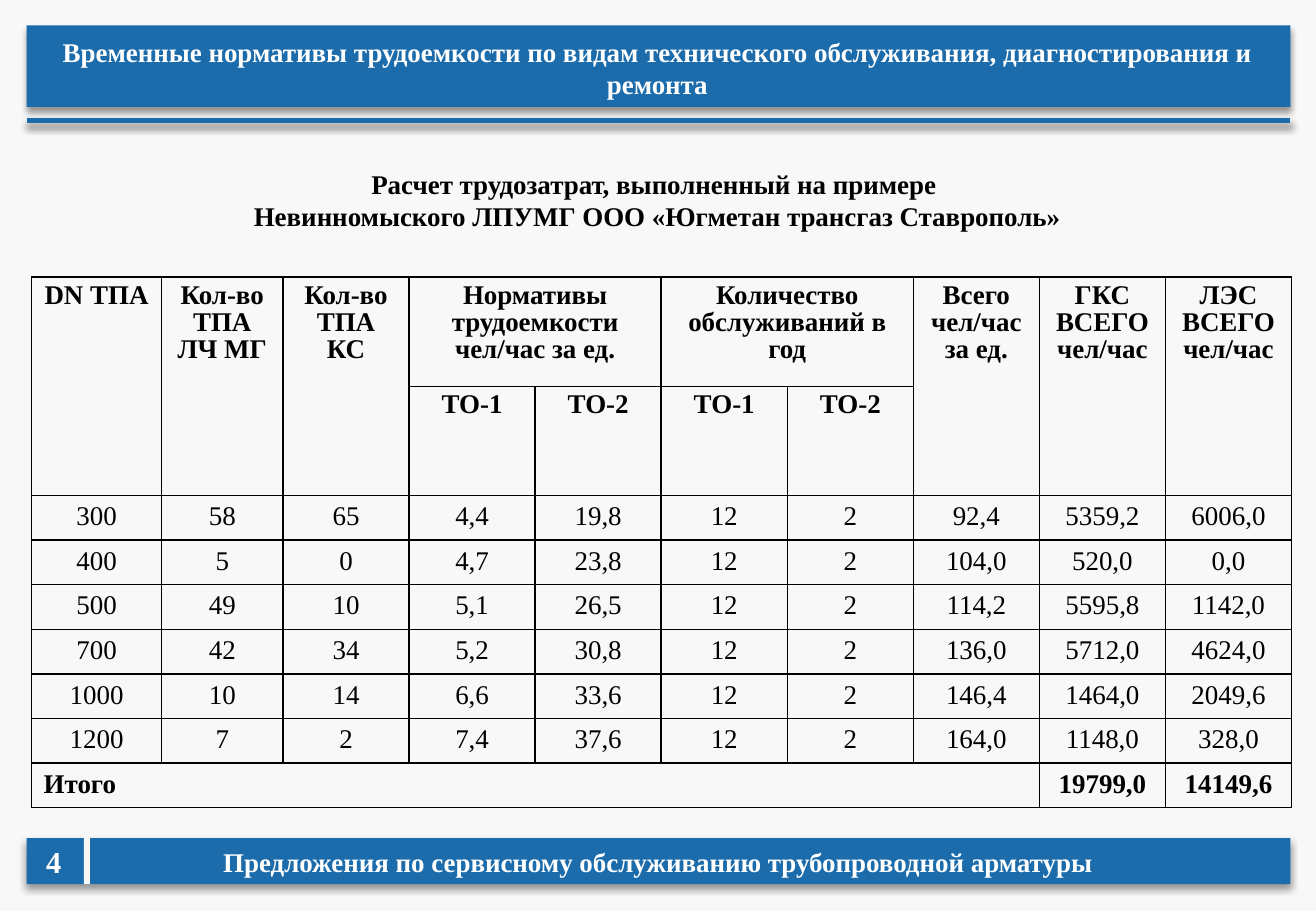
from dataclasses import dataclass
from typing import Any, Optional

from lxml import etree
from pptx import Presentation
from pptx.dml.color import RGBColor
from pptx.enum.shapes import MSO_CONNECTOR, MSO_SHAPE
from pptx.enum.text import MSO_ANCHOR, MSO_AUTO_SIZE, PP_ALIGN
from pptx.oxml import parse_xml
from pptx.oxml.ns import nsdecls, qn
from pptx.util import Inches, Pt

RECTANGLE = MSO_SHAPE.RECTANGLE
STRAIGHT = MSO_CONNECTOR.STRAIGHT
TOP = MSO_ANCHOR.TOP
GROW = MSO_AUTO_SIZE.SHAPE_TO_FIT_TEXT
LEFT, CENTER = PP_ALIGN.LEFT, PP_ALIGN.CENTER

SLIDE_WIDTH, SLIDE_HEIGHT = Inches(10.83), Inches(7.5)
FONT = "Times New Roman"
BLUE, PAPER, WHITE, BLACK = "1C6CAC", "F8F8F8", "FFFFFF", "000000"


@dataclass
class Box:
    """A frame in percent of the slide's width and height."""
    left: float
    top: float
    width: float
    height: float

    def frame(self) -> tuple[int, int, int, int]:
        return (across(self.left), down(self.top),
                across(self.width), down(self.height))


@dataclass
class Band:
    box: Box
    color: str
    shadow: bool = True


@dataclass
class Label:
    text: str
    box: Box
    color: str = WHITE
    size: int = 16
    align: Any = CENTER
    wrap: bool = True


@dataclass
class Heading:
    text: str
    row: int
    column: int
    rows: int = 1
    columns: int = 1


HEADER_BAND = Band(Box(2.03, 2.8, 96.03, 8.93), BLUE)
FOOTER_BANDS = [
    Band(Box(2.03, 92, 96.03, 5.07), BLUE),
    Band(Box(6.37, 89.87, 0.46, 7.2), PAPER, shadow=False),
]
RULE = Box(2.03, 13.2, 96.03, 0)
TITLE = Label("Временные нормативы трудоемкости по видам технического обслуживания, "
              "диагностирования и ремонта", Box(2.03, 3.2, 95.84, 8.53))
LABELS = [
    Label("Предложения по сервисному обслуживанию трубопроводной арматуры",
          Box(0, 92.13, 100, 4.93)),
    Label("4", Box(2.59, 91.87, 3.05, 5.33), size=18, align=LEFT, wrap=False),
    Label("Расчет трудозатрат, выполненный на примере \n"
          "Невинномыского ЛПУМГ ООО «Югметан трансгаз Ставрополь»",
          Box(2.03, 17.73, 95.84, 8.53), BLACK),
]

TABLE_BOX = Box(2.4, 30.4, 95.75, 58.23)
COLUMN_WIDTHS = [9.88, 9.23] + [9.58] * 8
ROW_HEIGHTS = [12, 12] + [4.89] * 7
HEADINGS = [
    Heading("DN ТПА", 0, 0, rows=2),
    Heading("Кол-во ТПА ЛЧ МГ", 0, 1, rows=2),
    Heading("Кол-во ТПА КС", 0, 2, rows=2),
    Heading("Нормативы трудоемкости чел/час за ед.", 0, 3, columns=2),
    Heading("Количество обслуживаний в год", 0, 5, columns=2),
    Heading("Всего чел/час за ед.", 0, 7, rows=2),
    Heading("ГКС ВСЕГО чел/час", 0, 8, rows=2),
    Heading("ЛЭС ВСЕГО чел/час", 0, 9, rows=2),
] + [Heading(f"ТО-{2 - column % 2}", 1, column) for column in range(3, 7)]
VALUES = [
    ["300", "58", "65", "4,4", "19,8", "12", "2", "92,4", "5359,2", "6006,0"],
    ["400", "5", "0", "4,7", "23,8", "12", "2", "104,0", "520,0", "0,0"],
    ["500", "49", "10", "5,1", "26,5", "12", "2", "114,2", "5595,8", "1142,0"],
    ["700", "42", "34", "5,2", "30,8", "12", "2", "136,0", "5712,0", "4624,0"],
    ["1000", "10", "14", "6,6", "33,6", "12", "2", "146,4", "1464,0", "2049,6"],
    ["1200", "7", "2", "7,4", "37,6", "12", "2", "164,0", "1148,0", "328,0"],
]
TOTALS = [Heading("Итого", 8, 0, columns=8),
          Heading("19799,0", 8, 8), Heading("14149,6", 8, 9)]


def across(share: float) -> int:
    return round(SLIDE_WIDTH * share / 100)


def down(share: float) -> int:
    return round(SLIDE_HEIGHT * share / 100)


def rgb(color: str) -> RGBColor:
    return RGBColor.from_string(color)


def paint(target: Any, color: str) -> None:
    target.fill.solid()
    target.fill.fore_color.rgb = rgb(color)


def add_shadow(shape: Any) -> None:
    shape.element.spPr.append(parse_xml(
        f'<a:effectLst {nsdecls("a")}><a:outerShdw blurRad="{Pt(4)}" dist="{Pt(3)}" '
        f'dir="5400000" rotWithShape="0"><a:srgbClr val="{BLACK}">'
        '<a:alpha val="40000"/></a:srgbClr></a:outerShdw></a:effectLst>'))


def write(frame: Any, text: str, color: str, size: int = 16, bold: bool = True,
          align: Any = CENTER, spacing: Optional[float] = None) -> None:
    frame.text = text
    for para in frame.paragraphs:
        para.alignment = align
        para.line_spacing = spacing
        for span in para.runs:
            span.font.name, span.font.size = FONT, Pt(size)
            span.font.bold = bold
            span.font.color.rgb = rgb(color)


def draw_band(page: Any, band: Band) -> Any:
    shape = page.shapes.add_shape(RECTANGLE, *band.box.frame())
    paint(shape, band.color)
    shape.line.fill.background()
    if band.shadow:
        add_shadow(shape)
    else:
        shape.shadow.inherit = False
    return shape


def fill_label(shape: Any, label: Label) -> None:
    shape.left, shape.top, shape.width, shape.height = label.box.frame()
    frame = shape.text_frame
    frame.word_wrap = label.wrap
    frame.auto_size = GROW
    frame.vertical_anchor = TOP
    write(frame, label.text, label.color, label.size, align=label.align)


def draw_rule(page: Any, box: Box) -> None:
    left, top, width, height = box.frame()
    rule = page.shapes.add_connector(STRAIGHT, left, top, left + width, top + height)
    rule.line.color.rgb = rgb(BLUE)
    rule.line.width = Pt(3)
    add_shadow(rule)


def add_borders(cell: Any) -> None:
    properties = cell._tc.get_or_add_tcPr()
    for place, side in enumerate(("lnL", "lnR", "lnT", "lnB")):
        border = etree.Element(qn(f"a:{side}"), w=str(Pt(1)))
        fill = etree.SubElement(border, qn("a:solidFill"))
        etree.SubElement(fill, qn("a:srgbClr"), val=BLACK)
        properties.insert(place, border)


def draw_table(page: Any) -> None:
    table = page.shapes.add_table(len(ROW_HEIGHTS), len(COLUMN_WIDTHS),
                                  *TABLE_BOX.frame()).table
    table.first_row = table.horz_banding = False
    for column, width in zip(table.columns, COLUMN_WIDTHS):
        column.width = across(width)
    for row, height in zip(table.rows, ROW_HEIGHTS):
        row.height = down(height)
    for cell in table.iter_cells():
        paint(cell, PAPER)
        add_borders(cell)
    for item in HEADINGS + TOTALS:
        cell = table.cell(item.row, item.column)
        if item.rows * item.columns > 1:
            cell.merge(table.cell(item.row + item.rows - 1,
                                  item.column + item.columns - 1))
        write(cell.text_frame, item.text, BLACK, spacing=0.9 if item.row < 2 else None,
              align=LEFT if item.columns == 8 else CENTER)
    for row, values in enumerate(VALUES, start=2):
        for column, value in enumerate(values):
            write(table.cell(row, column).text_frame, value, BLACK, bold=False)


def main() -> None:
    deck = Presentation()
    deck.slide_width, deck.slide_height = SLIDE_WIDTH, SLIDE_HEIGHT
    page = deck.slides.add_slide(deck.slide_layouts[5])
    paint(page.background, PAPER)

    # Header: the title lies on top of its band
    header = draw_band(page, HEADER_BAND)
    fill_label(page.shapes.title, TITLE)
    header.element.addnext(page.shapes.title.element)
    draw_rule(page, RULE)

    # Footer, page number and subtitle
    for band in FOOTER_BANDS:
        draw_band(page, band)
    for label in LABELS:
        fill_label(page.shapes.add_textbox(*label.box.frame()), label)

    # Labour table
    draw_table(page)
    deck.save("out.pptx")


if __name__ == "__main__":
    main()
